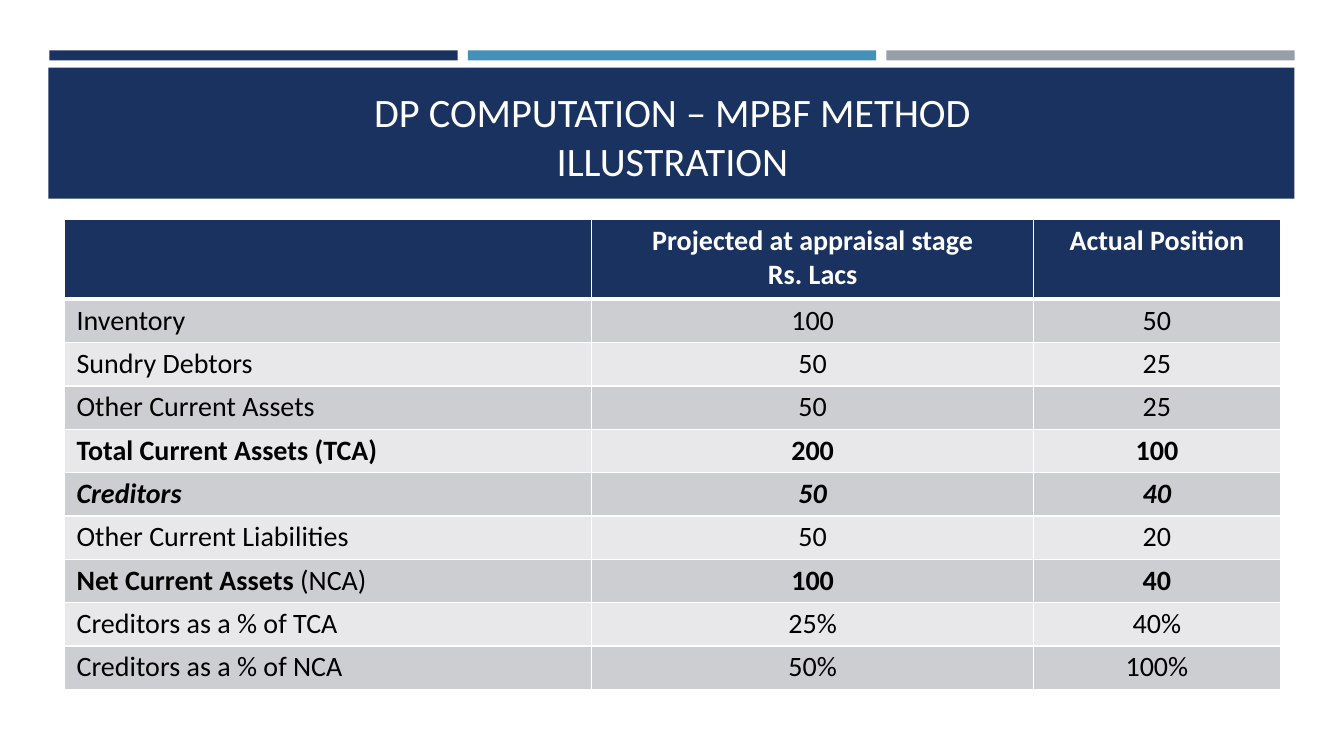
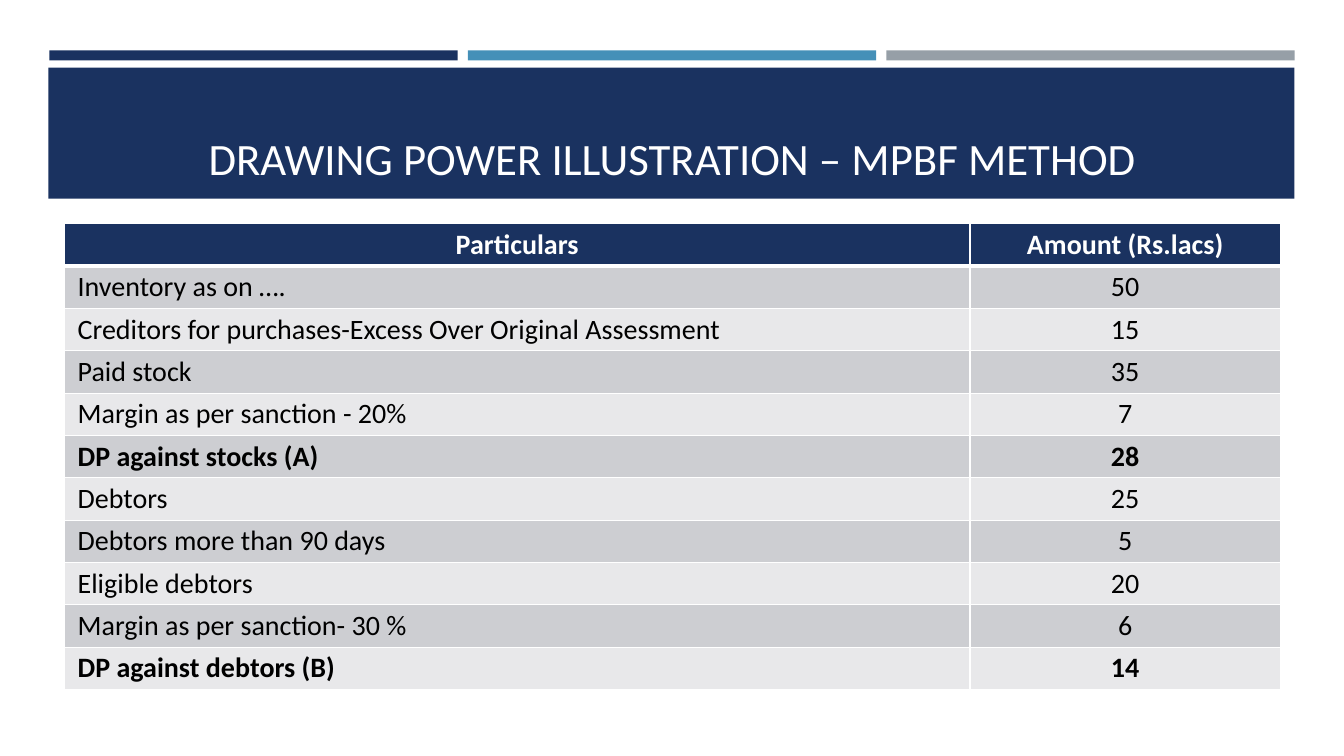
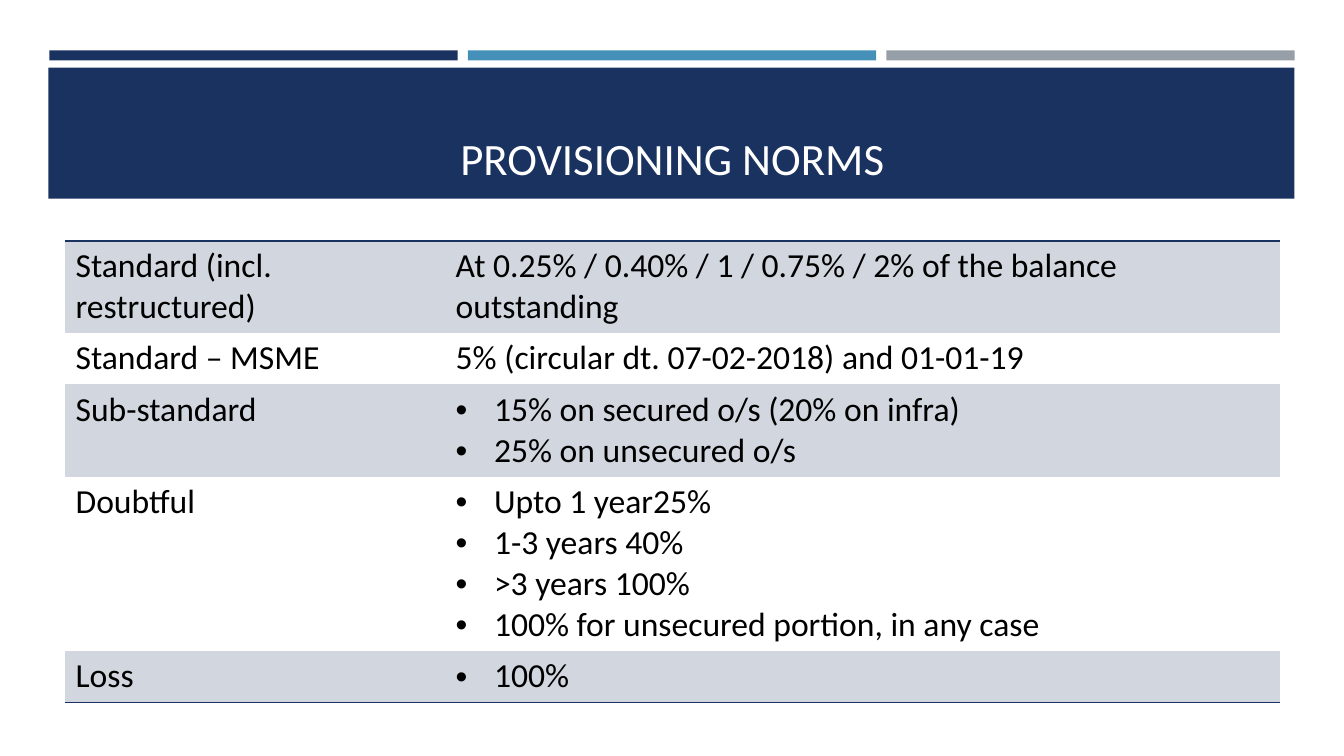
import pptx
import pptx.util
import pptx.dml.color
import pptx.enum.shapes
import pptx.enum.text
import pptx.oxml.ns
from lxml import etree

Inches, Pt = pptx.util.Inches, pptx.util.Pt
rgb = pptx.dml.color.RGBColor.from_string
qn = pptx.oxml.ns.qn
PP_ALIGN = pptx.enum.text.PP_ALIGN
RECT = pptx.enum.shapes.MSO_SHAPE.RECTANGLE

FONT = "Calibri"
NAVY, BLUE, GREY = "1A3260", "4590B8", "969FA7"
WHITE, BLACK = "FFFFFF", "000000"
GREY_BANDS = ["CDCED2", "E8E8EA"]
NAVY_BANDS = ["D1D6DF", None]
PLAIN_TABLE_STYLE = "{2D5ABB26-0587-4C30-8999-92F81FD0307C}"
LEFT, WIDTH = 0.64, 12.06

# A row is its emphasis (b bold, i italic) and its cells.
# Text after "|" is not emphasised; a list makes bullets.
tables = [
    {
        "title": "DP COMPUTATION – MPBF METHOD\nILLUSTRATION", "title_size": 28.8,
        "top": 2.18, "cols": [5.23, 4.38, 2.45], "heights": [0.79] + [0.43] * 9,
        "size": 20, "inset": (0.12, 0.04), "bands": GREY_BANDS, "header": True,
        "rows": [
            ("b", ["", "Projected at appraisal stage\nRs. Lacs", "Actual Position"]),
            ("", ["Inventory", "100", "50"]),
            ("", ["Sundry Debtors", "50", "25"]),
            ("", ["Other Current Assets", "50", "25"]),
            ("b", ["Total Current Assets (TCA)", "200", "100"]),
            ("bi", ["Creditors", "50", "40"]),
            ("", ["Other Current Liabilities", "50", "20"]),
            ("b", ["Net Current Assets| (NCA)", "100", "40"]),
            ("", ["Creditors as a % of TCA", "25%", "40%"]),
            ("", ["Creditors as a % of NCA", "50%", "100%"]),
        ],
    },
    {
        "title": "DRAWING POWER ILLUSTRATION – MPBF METHOD", "title_size": 32,
        "top": 2.22, "cols": [8.98, 3.08], "heights": [0.41] * 11,
        "size": 20, "inset": (0.13, 0.04), "bands": GREY_BANDS, "header": True,
        "rows": [
            ("b", ["Particulars", "Amount (Rs.lacs)"]),
            ("", ["Inventory as on ….", "50"]),
            ("", ["Creditors for purchases-Excess Over Original Assessment", "15"]),
            ("", ["Paid stock", "35"]),
            ("", ["Margin as per sanction - 20%", "7"]),
            ("b", ["DP against stocks (A)", "28"]),
            ("", ["Debtors", "25"]),
            ("", ["Debtors more than 90 days", "5"]),
            ("", ["Eligible debtors", "20"]),
            ("", ["Margin as per sanction- 30 %", "6"]),
            ("b", ["DP against debtors (B)", "14"]),
        ],
    },
    {
        "title": "PROVISIONING NORMS", "title_size": 32,
        "top": 2.39, "cols": [3.77, 8.29], "heights": [0.91, 0.51, 0.91, 1.73, 0.51],
        "size": 24, "inset": (0.11, 0.05), "bands": NAVY_BANDS, "header": False,
        "rows": [
            ("", ["Standard (incl. restructured)",
                  "At 0.25% / 0.40% / 1 / 0.75% / 2% of the balance outstanding"]),
            ("", ["Standard – MSME", "5% (circular dt. 07-02-2018) and 01-01-19"]),
            ("", ["Sub-standard", ["15% on secured o/s (20% on infra)",
                                   "25% on unsecured o/s"]]),
            ("", ["Doubtful", ["Upto 1 year25%", "1-3 years 40%", ">3 years 100%",
                               "100% for unsecured portion, in any case"]]),
            ("", ["Loss", ["100%"]]),
        ],
    },
]


def add_runs(p, text, size, color, emphasis=""):
    """Write text into p; a newline is a line break, "|" ends the emphasis."""
    for i, part in enumerate(text.split("|")):
        for j, line in enumerate(part.split("\n")):
            if j:
                p.add_line_break()
            if not line:
                continue
            r = p.add_run()
            r.text = line
            r.font.name = FONT
            r.font.size = Pt(size)
            r.font.color.rgb = rgb(color)
            r.font.bold = "b" in emphasis and i == 0
            r.font.italic = "i" in emphasis and i == 0


def add_border(cell, side, color, width):
    """Draw one side (L, R, T, B in that order) of a cell."""
    tcPr = cell._tc.get_or_add_tcPr()
    ln = etree.SubElement(tcPr, qn("a:ln" + side), w=str(Pt(width)))
    fill = etree.SubElement(ln, qn("a:solidFill"))
    etree.SubElement(fill, qn("a:srgbClr"), val=color)


prs = pptx.Presentation()
prs.slide_width, prs.slide_height = Inches(13.33), Inches(7.5)
layout = prs.slide_layouts[5]

# The bands are drawn on the first slide, then moved behind the layout's title.
bands = [(0.49 + 4.15 * i, 0.5, 4.05, 0.1, c) for i, c in enumerate([NAVY, BLUE, GREY])]
bands.append((0.48, 0.67, 12.36, 1.3, NAVY))

for n, table in enumerate(tables):
    s = prs.slides.add_slide(layout)
    if n == 0:
        for i, (x, y, w, h, color) in enumerate(bands):
            sp = s.shapes.add_shape(RECT, Inches(x), Inches(y), Inches(w), Inches(h))
            sp.shadow.inherit = False
            sp.fill.solid()
            sp.fill.fore_color.rgb = rgb(color)
            sp.line.fill.background()
            layout.shapes.element.insert(2 + i, sp.element)

    title = s.shapes.title
    title.left, title.top = Inches(LEFT), Inches(0.77)
    title.width, title.height = Inches(WIDTH), Inches(1.11)
    tf = title.text_frame
    tf.word_wrap = True
    tf.auto_size = pptx.enum.text.MSO_AUTO_SIZE.NONE
    tf.vertical_anchor = pptx.enum.text.MSO_ANCHOR.BOTTOM
    tf.paragraphs[0].alignment = PP_ALIGN.CENTER
    add_runs(tf.paragraphs[0], table["title"], table["title_size"], WHITE)

    rows, header = table["rows"], table["header"]
    frame = s.shapes.add_table(len(rows), len(table["cols"]), Inches(LEFT),
                               Inches(table["top"]), Inches(WIDTH),
                               Inches(sum(table["heights"])))
    tbl = frame.table
    tbl.first_row = header
    tbl.horz_banding = False
    frame.element.find(".//" + qn("a:tableStyleId")).text = PLAIN_TABLE_STYLE
    for column, width in zip(tbl.columns, table["cols"]):
        column.width = Inches(width)

    for i, (emphasis, texts) in enumerate(rows):
        tbl.rows[i].height = Inches(table["heights"][i])
        is_head = header and i == 0
        fill = NAVY if is_head else table["bands"][(i - header) % 2]
        for j, text in enumerate(texts):
            cell = tbl.cell(i, j)
            inset_x, inset_y = table["inset"]
            cell.margin_left = cell.margin_right = Inches(inset_x)
            cell.margin_top = cell.margin_bottom = Inches(inset_y)

            if header:
                for side in "LRTB":
                    thick = (i, side) in [(0, "B"), (1, "T")]
                    add_border(cell, side, WHITE, 3 if thick else 1)
            elif i == 0:
                add_border(cell, "T", NAVY, 1)
            elif i == len(rows) - 1:
                add_border(cell, "B", NAVY, 1)

            if fill:
                cell.fill.solid()
                cell.fill.fore_color.rgb = rgb(fill)
            else:
                cell.fill.background()

            bulleted = isinstance(text, list)
            tf = cell.text_frame
            for k, line in enumerate(text if bulleted else [text]):
                p = tf.add_paragraph() if k else tf.paragraphs[0]
                if bulleted:
                    pPr = p._p.get_or_add_pPr()
                    pPr.set("marL", str(Inches(0.38)))
                    pPr.set("indent", str(-Inches(0.38)))
                    etree.SubElement(pPr, qn("a:buFont"), typeface="Arial")
                    etree.SubElement(pPr, qn("a:buChar"), char="•")
                centred = is_head or (header and j > 0)
                p.alignment = PP_ALIGN.CENTER if centred else PP_ALIGN.LEFT
                add_runs(p, line, table["size"], WHITE if is_head else BLACK, emphasis)

prs.save("out.pptx")
